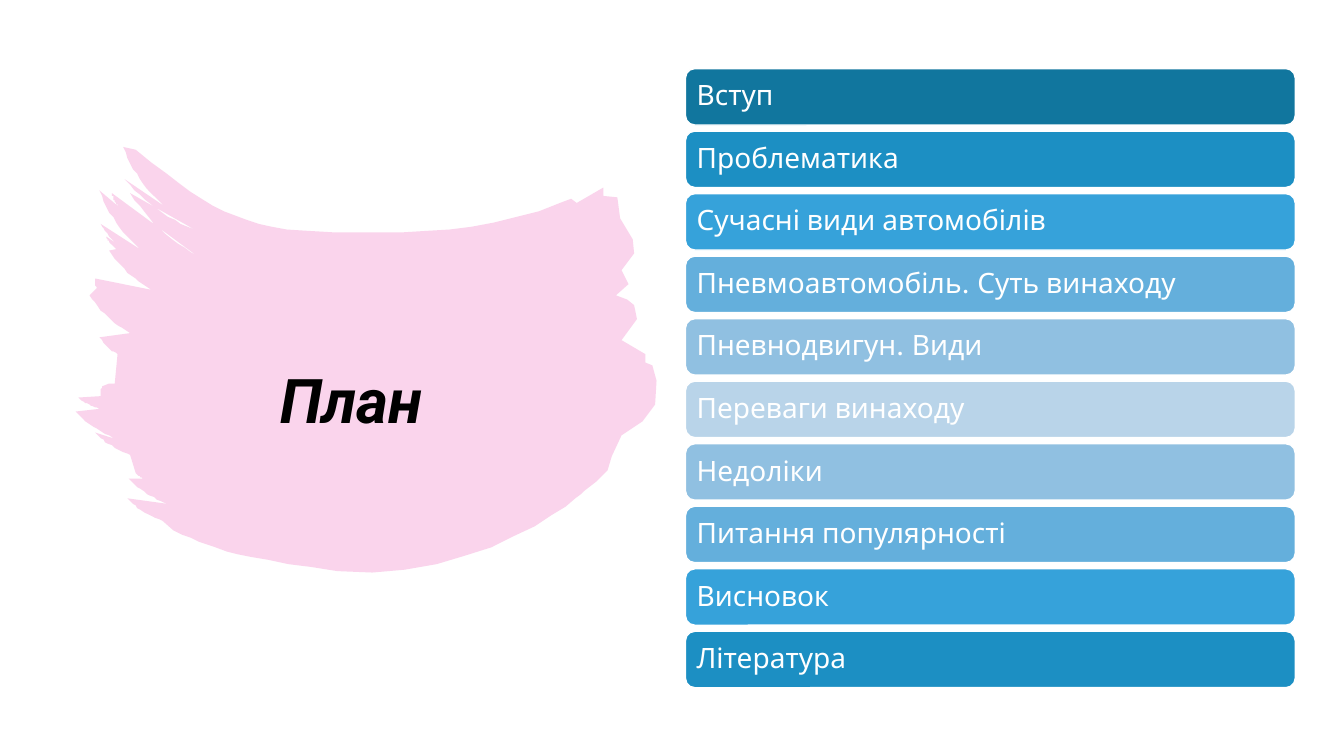
from lxml.etree import SubElement
from pptx import Presentation
from pptx.dml.color import RGBColor
from pptx.enum.shapes import MSO_SHAPE
from pptx.enum.text import MSO_ANCHOR, PP_ALIGN
from pptx.oxml.ns import qn
from pptx.util import Pt

COLORS = {
    "brush": "E729A2", "title": "000000", "white": "FFFFFF",
    "deep": "11769E", "strong": "1C8FC3", "bright": "36A2DA",
    "medium": "64AFDC", "soft": "90C0E1", "pale": "B9D4E9",
}
TITLE = "План"
PLAN = [
    "Вступ", "Проблематика", "Сучасні види автомобілів",
    "Пневмоавтомобіль. Суть винаходу", "Пневнодвигун. Види",
    "Переваги винаходу", "Недоліки", "Питання популярності",
    "Висновок", "Література",
]
BAR_SHADES = ["deep", "strong", "bright", "medium", "soft", "pale"]

TITLE_FONT = {"name": "Roboto", "size": Pt(44), "bold": True, "italic": True}
TITLE_PARAGRAPH = {"alignment": PP_ALIGN.CENTER, "line_spacing": 0.9}
TITLE_FRAME = {"word_wrap": True, "vertical_anchor": MSO_ANCHOR.BOTTOM}
BAR_FONT = {"name": "League Spartan", "size": Pt(20)}
BAR_PARAGRAPH = {"alignment": PP_ALIGN.LEFT, "line_spacing": 0.9, "space_after": Pt(7)}
BAR_FRAME = {
    "word_wrap": True, "vertical_anchor": MSO_ANCHOR.MIDDLE,
    "margin_left": Pt(6), "margin_top": Pt(6),
    "margin_right": Pt(6), "margin_bottom": Pt(6),
}

TITLE_BOX = (51, 168.5, 399.6, 147)
BAR_LEFT, BAR_TOP, BAR_WIDTH, BAR_HEIGHT = 489.6, 49, 435.6, 40.3
BAR_PITCH = 44.66

# The brush stroke runs anticlockwise: top, left bristles, bottom, right end.
# A smooth edge is a start, then (control, control, end) for each curve.
TOP_START = (400, 145)
TOP_CURVES = [
    ((340, 170), (270, 168), (205, 164)),
    ((160, 156), (145, 145), (97, 107)),
]
BOTTOM_START = (124, 379)
BOTTOM_CURVES = [
    ((150, 391), (160, 396), (241, 408)),
    ((343, 416), (417, 353), (417, 351)),
]
# Each bristle is a tip and the root where the next bristle begins.
BRISTLES = [
    ((88, 105), (117, 147)), ((89, 128), (139, 164)), ((93, 138), (141, 183)),
    ((80, 138), (84, 147)), ((71, 136), (100, 178)), ((72, 160), (86, 176)),
    ((76, 169), (83, 178)), ((78, 179), (108, 207)), ((68, 199), (69, 206)),
    ((64, 211), (93, 238)), ((71, 241), (84, 253)), ((82, 274), (78, 274)),
    ((73, 276), (72, 283)), ((56, 284), (72, 292)), ((54, 294), (87, 315)),
    ((68, 309), (93, 325)), ((97, 338), (103, 342)), ((92, 342), (120, 360)),
    ((91, 356), (116, 372)),
]
BRISTLE_BOW = 0.08
RAGGED_END = [
    (426, 344), (434, 336), (437, 326), (444, 311), (459, 301), (468, 289),
    (469, 272), (466, 261), (461, 259), (461, 253), (444, 243), (455, 228),
    (453, 218), (448, 214), (440, 211), (449, 203), (444, 193), (453, 181),
    (452, 171), (443, 156), (441, 141), (431, 140), (431, 134), (412, 145),
    (408, 142),
]


def bezier(start, first, second, end, steps=12):
    """Points along a cubic curve, without its start."""
    points = []
    for step in range(1, steps + 1):
        t = step / steps
        weights = ((1 - t) ** 3, 3 * t * (1 - t) ** 2, 3 * t * t * (1 - t), t ** 3)
        points.append(tuple(
            sum(weight * value for weight, value in zip(weights, values))
            for values in zip(start, first, second, end)))
    return points


def smooth_edge(start, curves):
    points = [start]
    for curve in curves:
        points += bezier(points[-1], *curve)
    return points


def bristle_edge(tip, root):
    """A tip-to-root edge that sags to the lower left."""
    run, drop = root[0] - tip[0], root[1] - tip[1]
    shift = (-BRISTLE_BOW * drop, BRISTLE_BOW * run)
    controls = [
        (tip[0] + part * run + shift[0], tip[1] + part * drop + shift[1])
        for part in (1 / 3, 2 / 3)]
    return [tip, *bezier(tip, *controls, root)]


def brush_outline():
    outline = smooth_edge(TOP_START, TOP_CURVES)
    for tip, root in BRISTLES:
        outline += bristle_edge(tip, root)
    return outline + smooth_edge(BOTTOM_START, BOTTOM_CURVES) + RAGGED_END


def rgb(name):
    return RGBColor.from_string(COLORS[name])


def apply_format(target, values):
    for attribute, value in values.items():
        setattr(target, attribute, value)


def paint(shape, color):
    shape.shadow.inherit = False
    shape.fill.solid()
    shape.fill.fore_color.rgb = rgb(color)


def write(shape, text, color, frame_format, paragraph_format, font_format):
    paragraph = shape.text_frame.paragraphs[0]
    run = paragraph.add_run()
    run.text = text
    apply_format(shape.text_frame, frame_format)
    apply_format(paragraph, paragraph_format)
    apply_format(run.font, font_format)
    run.font.color.rgb = rgb(color)


def add_brush(slide):
    start, *rest = brush_outline()
    builder = slide.shapes.build_freeform(*start, scale=Pt(1))
    builder.add_line_segments(rest, close=True)
    brush = builder.convert_to_shape()
    paint(brush, "brush")
    brush.line.fill.background()
    fill_color = brush.element.spPr.find(qn("a:solidFill"))[0]
    SubElement(fill_color, qn("a:alpha"), val="20000")


def add_title(slide):
    title = slide.shapes.add_textbox(*map(Pt, TITLE_BOX))
    write(title, TITLE, "title", TITLE_FRAME, TITLE_PARAGRAPH, TITLE_FONT)


def add_bar(slide, index, text):
    """One plan item; shades fade to the palest, then darken again."""
    box = (BAR_LEFT, BAR_TOP + index * BAR_PITCH, BAR_WIDTH, BAR_HEIGHT)
    bar = slide.shapes.add_shape(MSO_SHAPE.ROUNDED_RECTANGLE, *map(Pt, box))
    palest = len(BAR_SHADES) - 1
    paint(bar, BAR_SHADES[palest - abs(palest - index)])
    bar.line.color.rgb = rgb("white")
    bar.line.width = Pt(1)
    write(bar, text, "white", BAR_FRAME, BAR_PARAGRAPH, BAR_FONT)


def main():
    presentation = Presentation()
    presentation.slide_width, presentation.slide_height = Pt(960), Pt(540)
    slide = presentation.slides.add_slide(presentation.slide_layouts[6])
    add_brush(slide)
    add_title(slide)
    for index, text in enumerate(PLAN):
        add_bar(slide, index, text)
    presentation.save("out.pptx")


if __name__ == "__main__":
    main()
